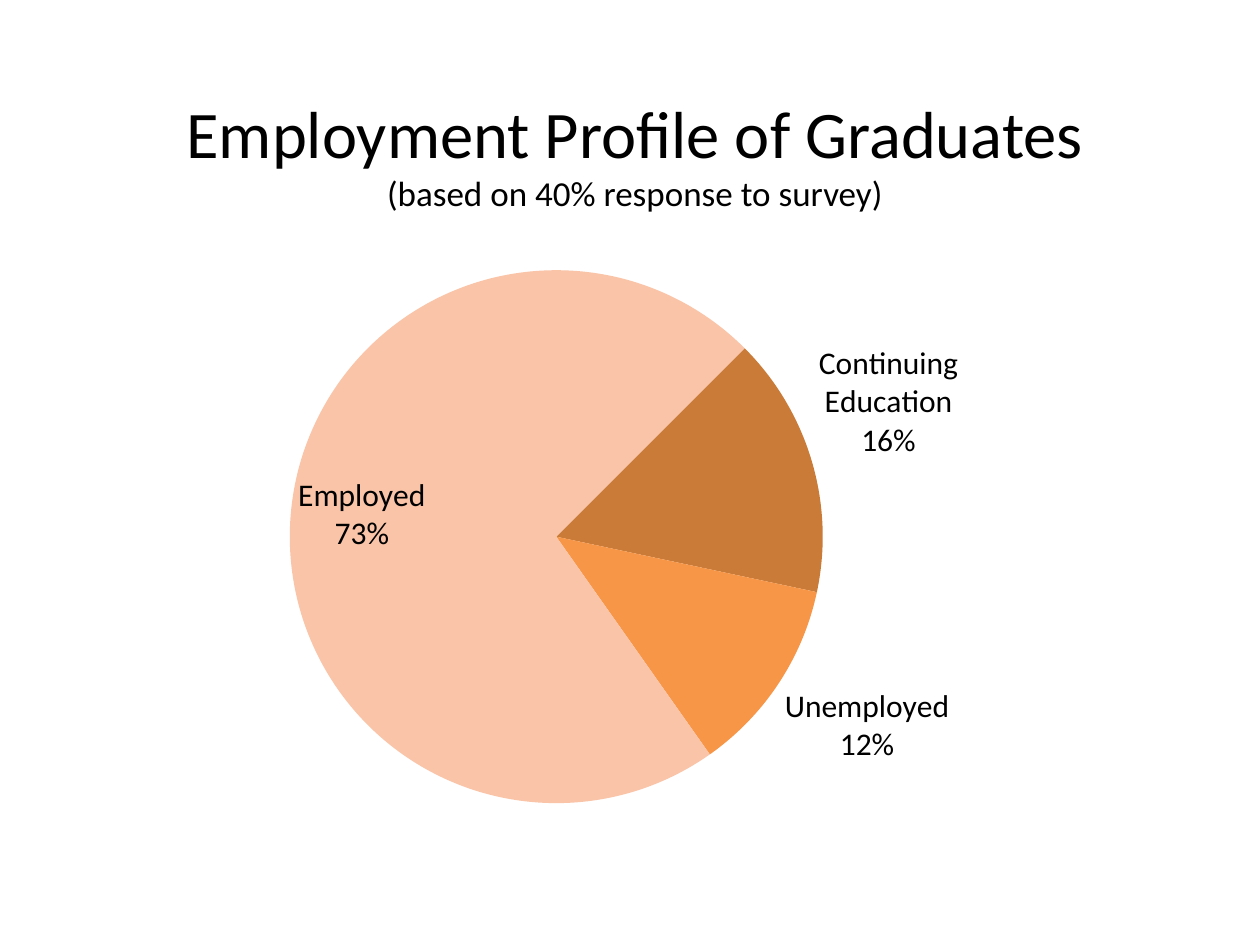
from copy import deepcopy

from lxml import etree
from pptx import Presentation
from pptx.chart.data import CategoryChartData
from pptx.dml.color import RGBColor
from pptx.enum.chart import XL_CHART_TYPE as ChartType, XL_LABEL_POSITION as LabelPosition
from pptx.enum.text import MSO_ANCHOR as Anchor, MSO_AUTO_SIZE as AutoSize, PP_ALIGN as Align
from pptx.oxml import parse_xml
from pptx.oxml.ns import nsdecls, qn
from pptx.util import Inches, Pt


def color(hex_value):
    return RGBColor.from_string(hex_value)


class SlideBuilder:
    font_name = "Calibri"
    text_color = "000000"
    label_size = 18

    def __init__(self, presentation):
        self.slide = presentation.slides.add_slide(presentation.slide_layouts[5])

    def style_font(self, font, size):
        font.name = self.font_name
        font.size = Pt(size)
        font.bold = False
        font.color.rgb = color(self.text_color)

    def title(self, lines, left, top, width, height):
        shape = self.slide.shapes.title
        shape.left, shape.top = Inches(left), Inches(top)
        shape.width, shape.height = Inches(width), Inches(height)
        text_frame = shape.text_frame
        text_frame.text = "\n".join(text for text, size in lines)
        text_frame.word_wrap = False
        text_frame.auto_size = AutoSize.NONE
        text_frame.vertical_anchor = Anchor.TOP
        for paragraph, (text, size) in zip(text_frame.paragraphs, lines):
            paragraph.alignment = Align.CENTER
            paragraph.space_before = Pt(0)
            for run in paragraph.runs:
                self.style_font(run.font, size)

    def pie(self, slices, start_angle, plot_area, inside, left, top, width, height):
        data = CategoryChartData()
        data.categories = [name for name, value, fill in slices]
        data.add_series("Series 1", [value for name, value, fill in slices])
        chart = self.slide.shapes.add_chart(
            ChartType.PIE, Inches(left), Inches(top), Inches(width), Inches(height), data
        ).chart
        chart.has_legend = False
        chart.has_title = False
        self.style_font(chart.font, self.label_size)

        # Slices
        plot = chart.plots[0]
        plot.vary_by_categories = False
        series = plot.series[0]
        for index, (name, value, fill) in enumerate(slices):
            point_format = series.points[index].format
            point_format.fill.solid()
            point_format.fill.fore_color.rgb = color(fill)
            point_format.line.fill.background()

        # First slice angle and plot area
        pie_xml = series._element.getparent()
        angle = pie_xml.find(qn("c:firstSliceAng"))
        if angle is None:
            angle = etree.SubElement(pie_xml, qn("c:firstSliceAng"))
        angle.set("val", str(start_angle))
        self.place_plot(pie_xml.getparent(), plot_area)
        self.pie_labels(series, inside)

    def place_plot(self, plot_xml, plot_area):
        old_layout = plot_xml.find(qn("c:layout"))
        if old_layout is not None:
            plot_xml.remove(old_layout)
        sizes = "".join(f'<c:{key} val="{value}"/>' for key, value in zip("xywh", plot_area))
        plot_xml.insert(0, parse_xml(
            f'<c:layout {nsdecls("c")}><c:manualLayout><c:layoutTarget val="inner"/>'
            f'<c:xMode val="edge"/><c:yMode val="edge"/>{sizes}</c:manualLayout></c:layout>'
        ))

    def pie_labels(self, series, inside):
        labels = series.data_labels
        labels.show_value = True
        labels.show_category_name = True
        labels.show_percentage = False
        labels.number_format = '0"%"'
        labels.number_format_is_linked = False
        labels.position = LabelPosition.OUTSIDE_END
        self.style_font(labels.font, self.label_size)
        labels_xml = labels._element

        # One label sits inside its slice
        label = series.points[inside].data_label
        label.position = LabelPosition.INSIDE_END
        self.style_font(label.font, self.label_size)
        label_xml = labels_xml.find(qn("c:dLbl"))
        label_xml.find(qn("c:showCatName")).set("val", "1")
        label_xml.insert(1, deepcopy(labels_xml.find(qn("c:numFmt"))))

        # Name and share on separate lines
        for element in (label_xml, labels_xml):
            separator = parse_xml(f'<c:separator {nsdecls("c")}>\n</c:separator>')
            flags = [child for child in element if child.tag.split("}")[1].startswith("show")]
            last_flag = [flag for flag in flags if flag.tag != qn("c:showLeaderLines")][-1]
            last_flag.addnext(separator)


def main():
    presentation = Presentation()
    presentation.slide_width, presentation.slide_height = Inches(10), Inches(7.5)
    builder = SlideBuilder(presentation)
    builder.title(
        [("Employment Profile of Graduates", 38), ("(based on 40% response to survey)", 20)],
        1.09, 0.68, 7.9, 1.08,
    )
    builder.pie(
        [
            ("Continuing Education", 16, "CB7B38"),
            ("Unemployed", 12, "F79646"),
            ("Employed", 73, "F9C4A8"),
        ],
        start_angle=45, plot_area=(0.2, 0.06, 0.47, 0.88), inside=2,
        left=0.5, top=1.82, width=9, height=4.88,
    )
    presentation.save("out.pptx")


if __name__ == "__main__":
    main()
